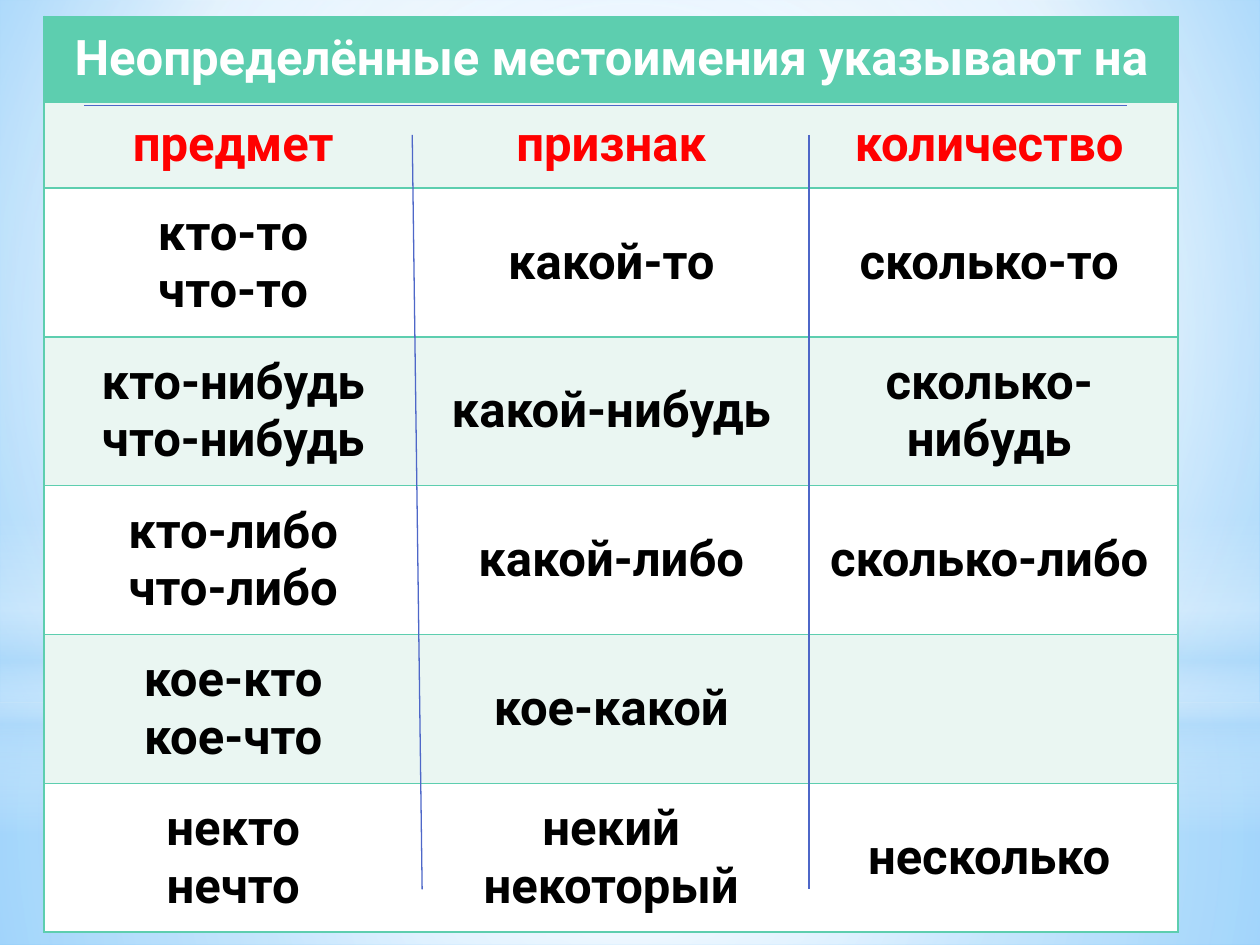
"""Build a slide with a table of Russian indefinite pronouns."""
from lxml import etree
from pptx import Presentation
from pptx.dml.color import RGBColor
from pptx.enum.shapes import MSO_CONNECTOR, MSO_SHAPE
from pptx.enum.text import MSO_ANCHOR, PP_ALIGN
from pptx.oxml.ns import qn
from pptx.util import Cm, Pt

RECTANGLE, OVAL = MSO_SHAPE.RECTANGLE, MSO_SHAPE.OVAL
STRAIGHT = MSO_CONNECTOR.STRAIGHT
MIDDLE, CENTER = MSO_ANCHOR.MIDDLE, PP_ALIGN.CENTER

WHITE = RGBColor(0xFF, 0xFF, 0xFF)
BLACK = RGBColor(0x00, 0x00, 0x00)
RED = RGBColor(0xFF, 0x00, 0x00)
GREEN = RGBColor(0x5D, 0xCE, 0xAF)
MINT = RGBColor(0xEA, 0xF6, 0xF2)
INDIGO = RGBColor(0x4E, 0x67, 0xC8)
SKY = RGBColor(0x9E, 0xD5, 0xFF)
AZURE = RGBColor(0x5B, 0xB9, 0xFF)
HAZE = RGBColor(0xB4, 0xDC, 0xFA)


def write_text(cell, text, size=28, color=BLACK, font="Roboto", bold=True):
    cell.vertical_anchor = MIDDLE
    cell.margin_left = cell.margin_right = Cm(0.13)
    cell.margin_top = cell.margin_bottom = Cm(0.13)
    paragraph = cell.text_frame.paragraphs[0]
    paragraph.text = text
    paragraph.alignment = CENTER
    paragraph.space_before = Pt(12)
    for run in paragraph.runs:
        run.font.size = Pt(size)
        run.font.name = font
        run.font.bold = bold
        run.font.color.rgb = color


def apply_gradient(fill, owner, stops, focus=None):
    fill.gradient()
    gradient = next(owner.iter(qn("a:gradFill")))
    for child in list(gradient):
        gradient.remove(child)
    stop_list = etree.SubElement(gradient, qn("a:gsLst"))
    for position, color, opacity in stops:
        stop = etree.SubElement(stop_list, qn("a:gs"), pos=str(position * 1000))
        tint = etree.SubElement(stop, qn("a:srgbClr"), val=str(color))
        if opacity < 100:
            etree.SubElement(tint, qn("a:alpha"), val=str(opacity * 1000))
    if focus:
        radial = etree.SubElement(gradient, qn("a:path"), {"path": "circle"})
        edges = {side: str(share * 1000) for side, share in zip("ltrb", focus)}
        etree.SubElement(radial, qn("a:fillToRect"), edges)
    else:
        etree.SubElement(gradient, qn("a:lin"), ang="5400000", scaled="0")


prs = Presentation()
prs.slide_width, prs.slide_height = Cm(25.4), Cm(19.05)
slide = prs.slides.add_slide(prs.slide_layouts[6])
apply_gradient(
    slide.background.fill, slide.element,
    [(0, SKY, 100), (60, WHITE, 100), (100, AZURE, 100)], (20, 10, 20, 60),
)

CENTRE_FOCUS = (50, 50, 50, 50)
glows = [
    (RECTANGLE, 14.17, 4.88,
     [(0, WHITE, 91), (37, WHITE, 76), (100, HAZE, 79)], CENTRE_FOCUS),
    (RECTANGLE, 0, 14.17,
     [(0, WHITE, 89), (48, WHITE, 62), (100, HAZE, 79)], CENTRE_FOCUS),
    (RECTANGLE, 10.46, 6.35,
     [(0, WHITE, 0), (29, WHITE, 30), (45, HAZE, 40),
      (55, WHITE, 26), (65, HAZE, 60), (100, WHITE, 0)], None),
    (OVAL, 4.45, 14.17, [(0, WHITE, 100), (56, WHITE, 0)], CENTRE_FOCUS),
]
for outline, top, height, stops, focus in glows:
    glow = slide.shapes.add_shape(outline, 0, Cm(top), prs.slide_width, Cm(height))
    glow.shadow.inherit = False
    glow.line.fill.background()
    apply_gradient(glow.fill, glow.element, stops, focus)

pronoun_rows = [
    ("Неопределённые местоимения указывают на", "", ""),
    ("предмет", "признак", "количество"),
    ("кто-то\nчто-то", "какой-то", "сколько-то"),
    ("кто-нибудь\nчто-нибудь", "какой-нибудь", "сколько-нибудь"),
    ("кто-либо\nчто-либо", "какой-либо", "сколько-либо"),
    ("кое-кто\nкое-что", "кое-какой", ""),
    ("некто\nнечто", "некий\nнекоторый", "несколько"),
]
row_heights = [1.73] * 2 + [3] * 5
pronouns = slide.shapes.add_table(
    len(pronoun_rows), 3, Cm(0.89), Cm(0.33), Cm(22.86), Cm(sum(row_heights))
).table
for column in pronouns.columns:
    column.width = Cm(7.62)
pronouns.cell(0, 0).merge(pronouns.cell(0, 2))

for row_index, words in enumerate(pronoun_rows):
    pronouns.rows[row_index].height = Cm(row_heights[row_index])
    ink = {0: WHITE, 1: RED}.get(row_index, BLACK)
    band = GREEN if row_index == 0 else MINT if row_index % 2 else WHITE
    for column_index, word in enumerate(words):
        cell = pronouns.cell(row_index, column_index)
        if word:
            write_text(cell, word, color=ink)
        properties = cell._tc.get_or_add_tcPr()
        visible = {
            "L": row_index == 0 or column_index == 0,
            "R": row_index == 0 or column_index == 2,
            "T": True,
            "B": True,
        }
        for side, shown in visible.items():
            border = etree.SubElement(properties, qn(f"a:ln{side}"), w=str(Pt(1)))
            if shown:
                paint = etree.SubElement(border, qn("a:solidFill"))
                etree.SubElement(paint, qn("a:srgbClr"), val=str(GREEN))
            else:
                etree.SubElement(border, qn("a:noFill"))
        cell.fill.solid()
        cell.fill.fore_color.rgb = band

dividers = [
    (8.31, 2.72, 8.51, 17.93),
    (16.31, 2.72, 16.31, 17.93),
    (1.7, 2.13, 22.71, 2.13),
]
for ends in dividers:
    divider = slide.shapes.add_connector(STRAIGHT, *map(Cm, ends))
    divider.line.color.rgb = INDIGO
    divider.line.width = Pt(0.75)
    etree.SubElement(divider.element.spPr, qn("a:effectLst"))

prs.save("out.pptx")
